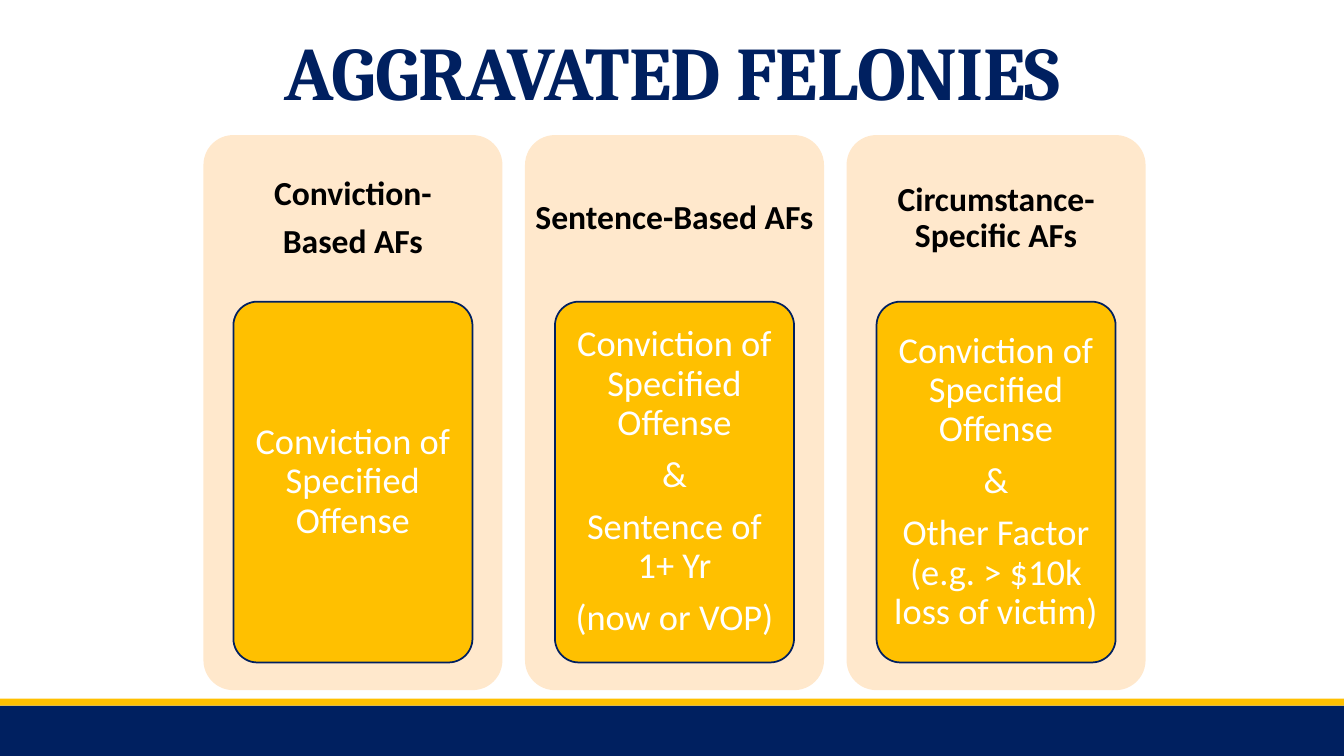
from pptx import Presentation
from pptx.dml.color import RGBColor
from pptx.enum.shapes import MSO_SHAPE
from pptx.enum.text import MSO_ANCHOR, PP_ALIGN
from pptx.util import Pt

COLORS = {"navy": "002060", "gold": "FFC000", "peach": "FFE8CC",
          "black": "000000", "white": "FFFFFF"}
SLIDE_W, SLIDE_H = 960, 540

COLUMNS = [
    (["Conviction-", "Based AFs"],
     ["Conviction of Specified Offense"]),
    (["Sentence-Based AFs"],
     ["Conviction of Specified Offense", "&", "Sentence of 1+ Yr", "(now or VOP)"]),
    (["Circumstance-Specific AFs"],
     ["Conviction of Specified Offense", "&",
      "Other Factor\v(e.g. > $10k loss of victim)"]),
]
PANEL_LEFT, PANEL_TOP, PANEL_W, PANEL_H = 145.3, 96.5, 213.6, 396.5
PANEL_PITCH = 229.7
HEADING_H = 119
CARD_W, CARD_H = 170.8, 257.7

prs = Presentation()
prs.slide_width, prs.slide_height = Pt(SLIDE_W), Pt(SLIDE_H)
slide = prs.slides.add_slide(prs.slide_layouts[6])


def add_block(kind, left, top, width, height, color):
    block = slide.shapes.add_shape(kind, Pt(left), Pt(top), Pt(width), Pt(height))
    block.shadow.inherit = False
    block.fill.solid()
    block.fill.fore_color.rgb = RGBColor.from_string(COLORS[color])
    block.line.fill.background()
    if kind == MSO_SHAPE.ROUNDED_RECTANGLE:
        block.adjustments[0] = 0.1
    return block


def write(shape, lines, size, color, font="Calibri", bold=False, spacing=0.9,
          inset=(7.2, 7.2), anchor=MSO_ANCHOR.MIDDLE):
    """Fill a shape with centred paragraphs; inset is (horizontal, vertical)."""
    frame = shape.text_frame
    frame.word_wrap = True
    frame.vertical_anchor = anchor
    frame.margin_left = frame.margin_right = Pt(inset[0])
    frame.margin_top = frame.margin_bottom = Pt(inset[1])
    frame.text = "\n".join(lines)
    for paragraph in frame.paragraphs:
        paragraph.alignment = PP_ALIGN.CENTER
        paragraph.line_spacing = spacing
        paragraph.font.size = Pt(size)
        paragraph.font.name = font
        paragraph.font.bold = bold
        paragraph.font.color.rgb = RGBColor.from_string(COLORS[color])
    for paragraph in frame.paragraphs[:-1]:
        paragraph.space_after = Pt(round(0.35 * size, 1))


add_block(MSO_SHAPE.RECTANGLE, 0, 504, SLIDE_W, 36, "navy")
add_block(MSO_SHAPE.RECTANGLE, 0, 499, SLIDE_W, 5, "gold")

title = slide.shapes.add_textbox(Pt(142), Pt(8.6), Pt(676.8), Pt(77.8))
write(title, ["AGGRAVATED FELONIES"], 54, "navy", font="Cambria", bold=True,
      spacing=0.85, inset=(7.2, 3.6), anchor=MSO_ANCHOR.BOTTOM)
title_run = title.text_frame.paragraphs[0].runs[0]
title_run._r.get_or_add_rPr().set("spc", "-50")

for column, (heading_lines, card_lines) in enumerate(COLUMNS):
    left = PANEL_LEFT + column * PANEL_PITCH
    add_block(MSO_SHAPE.ROUNDED_RECTANGLE, left, PANEL_TOP, PANEL_W, PANEL_H, "peach")

    heading = slide.shapes.add_textbox(Pt(left), Pt(PANEL_TOP), Pt(PANEL_W), Pt(HEADING_H))
    write(heading, heading_lines, 24, "black", bold=True)

    card = add_block(MSO_SHAPE.ROUNDED_RECTANGLE, left + (PANEL_W - CARD_W) / 2,
                     PANEL_TOP + HEADING_H, CARD_W, CARD_H, "gold")
    card.line.color.rgb = RGBColor.from_string(COLORS["navy"])
    card.line.width = Pt(1.25)
    write(card, card_lines, 26, "white", inset=(5, 3.6))

prs.save("out.pptx")
